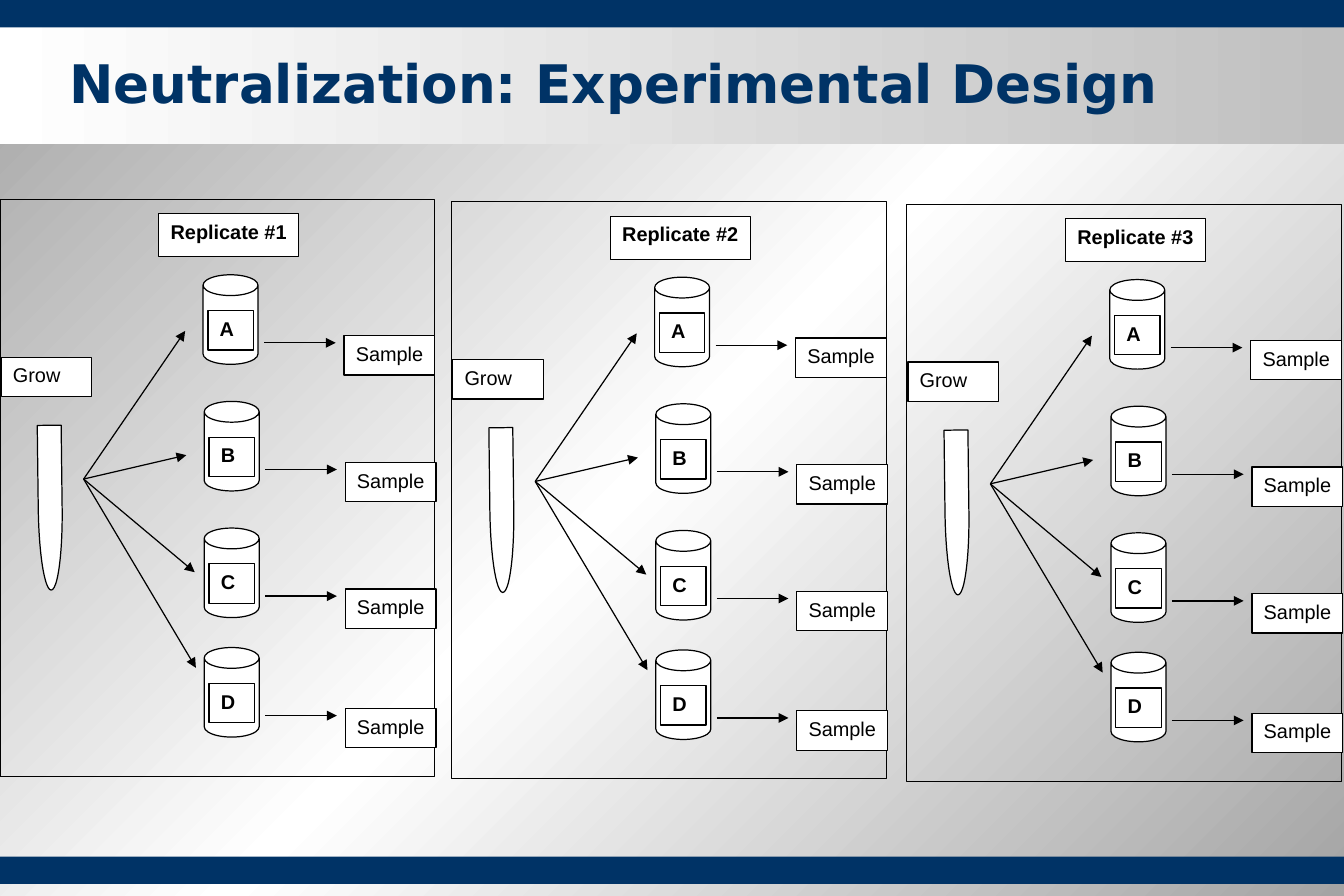
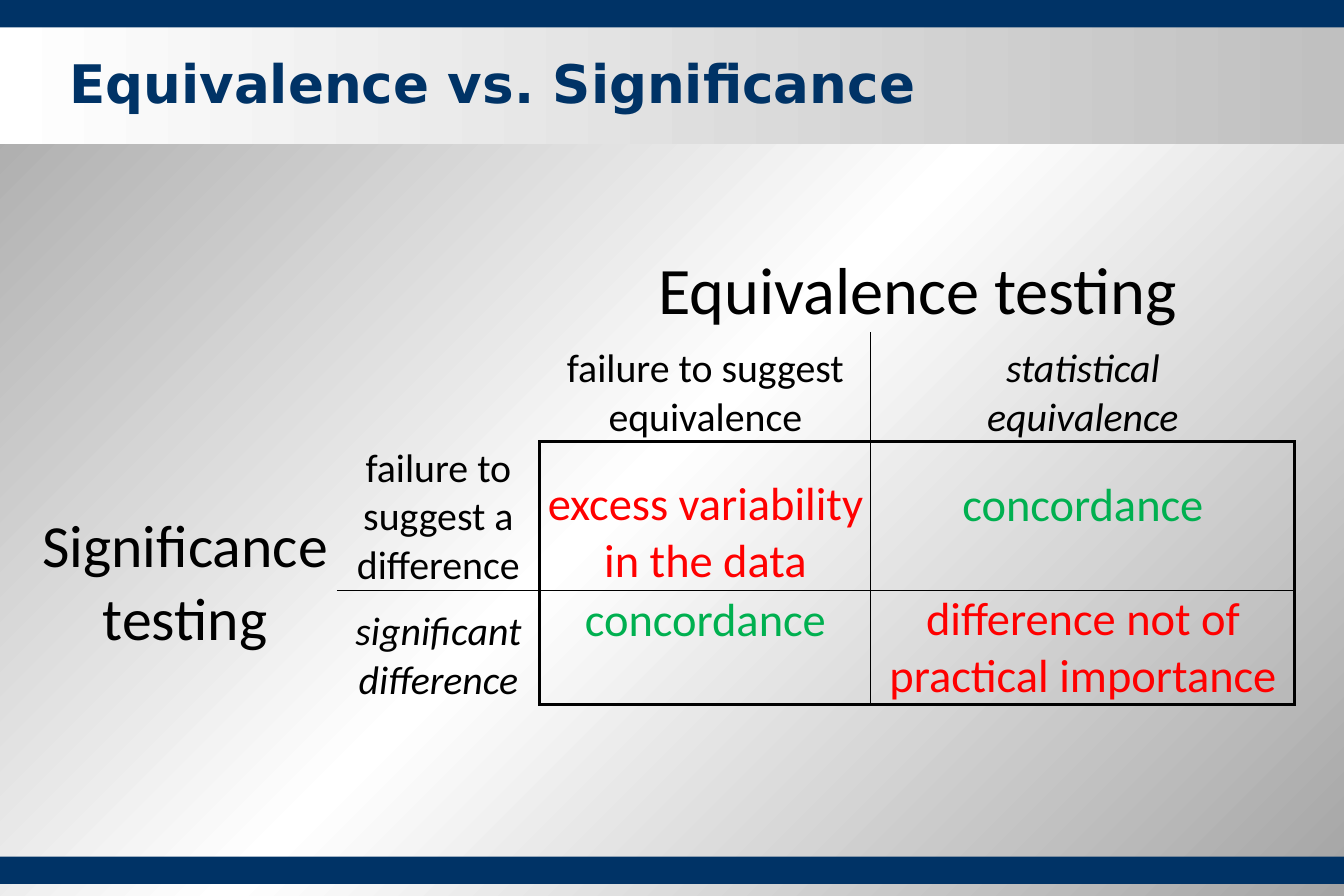
from dataclasses import dataclass
from typing import Optional

from lxml import etree
from pptx import Presentation
from pptx.dml.color import RGBColor
from pptx.enum.shapes import MSO_CONNECTOR, MSO_SHAPE
from pptx.enum.text import MSO_ANCHOR, MSO_AUTO_SIZE, PP_ALIGN
from pptx.oxml.ns import qn
from pptx.util import Inches, Pt


# Theme
@dataclass(frozen=True)
class Theme:
    navy: str = "003366"
    black: str = "000000"
    white: str = "FFFFFF"
    red: str = "FF0000"
    green: str = "00B050"
    backdrop: tuple = ((0, "A4A4A4"), (50, "FFFFFF"), (100, "A4A4A4"))
    title_fade: tuple = ((0, "FFFFFF"), (100, "C0C0C0"))
    title_font: str = "DejaVu Sans"
    label_font: str = "Arial"
    table_font: str = "Calibri"
    title_size: float = 32
    label_size: float = 12
    column_axis_size: float = 40
    row_axis_size: float = 36
    outcome_size: float = 24
    verdict_size: float = 28
    hairline: float = 0.75
    thin_rule: float = 0.5
    thick_rule: float = 2


THEME = Theme()
SLIDE_W, SLIDE_H = 11.25, 7.5
NO_GRID_STYLE = "{2D5ABB26-0587-4C30-8999-92F81FD0307C}"


# Content records
@dataclass(frozen=True)
class Panel:
    title: str
    left: float
    top: float


@dataclass(frozen=True)
class Vessel:
    letter: str
    top: float
    nudge: float
    arrow_tip: tuple[float, float]


@dataclass(frozen=True)
class Entry:
    row: int
    col: int
    lines: tuple[str, ...]
    size: float
    color: str = THEME.black
    italic: bool = False
    bottom: float = 0
    merge_to: Optional[tuple[int, int]] = None


@dataclass(frozen=True)
class Rule:
    side: str
    rows: tuple[int, ...]
    cols: tuple[int, ...]
    width: float


PANELS = (
    Panel("Replicate #1", 0, 1.67),
    Panel("Replicate #2", 3.78, 1.69),
    Panel("Replicate #3", 7.59, 1.71),
)
# Positions below are measured from the corner of a panel
VESSELS = (
    Vessel("A", 0.63, 0, (1.55, 1.10)),
    Vessel("B", 1.69, 0.01, (1.56, 2.14)),
    Vessel("C", 2.75, 0.01, (1.63, 3.12)),
    Vessel("D", 3.75, 0.01, (1.64, 3.92)),
)
FAN_START = (0.7, 2.34)

COLUMN_WIDTHS = (2.54, 1.7, 2.77, 3.55)
ROW_HEIGHTS = (0.92, 0.92, 1.24, 0.92)
ONE_LINE_UP = 0.47
ENTRIES = (
    Entry(0, 2, ("Equivalence testing",), THEME.column_axis_size, merge_to=(0, 3)),
    Entry(1, 2, ("failure to suggest equivalence",), THEME.outcome_size),
    Entry(1, 3, ("statistical", "equivalence"), THEME.outcome_size, italic=True),
    Entry(2, 0, ("Significance testing",), THEME.row_axis_size, bottom=0.4, merge_to=(3, 0)),
    Entry(2, 1, ("failure to suggest a difference",), THEME.outcome_size),
    Entry(2, 2, ("excess variability", "in the data"), THEME.verdict_size, THEME.red),
    Entry(2, 3, ("concordance",), THEME.verdict_size, THEME.green, bottom=ONE_LINE_UP),
    Entry(3, 1, ("significant difference",), THEME.outcome_size, italic=True),
    Entry(3, 2, ("concordance",), THEME.verdict_size, THEME.green, bottom=ONE_LINE_UP),
    Entry(3, 3, ("difference not of", "practical importance"), THEME.verdict_size, THEME.red),
)
RULES = (
    Rule("R", (1, 2, 3), (2,), THEME.thin_rule),
    Rule("B", (2,), (1, 2, 3), THEME.thin_rule),
    Rule("R", (2, 3), (1, 3), THEME.thick_rule),
    Rule("B", (1, 3), (2, 3), THEME.thick_rule),
)


# Drawing helpers
def rgb(color: str) -> RGBColor:
    return RGBColor.from_string(color)


def set_gradient(fill, owner, stops: tuple, angle: float) -> None:
    fill.gradient()
    fill.gradient_angle = angle
    stop_list = next(owner.iter(qn("a:gsLst")))
    for old_stop in list(stop_list):
        stop_list.remove(old_stop)
    for position, color in stops:
        stop = etree.SubElement(stop_list, qn("a:gs"), pos=str(position * 1000))
        etree.SubElement(stop, qn("a:srgbClr"), val=color)


def add_box(shapes, kind, left: float, top: float, width: float, height: float,
            fill: Optional[str] = None, outlined: bool = True):
    box = shapes.add_shape(kind, Inches(left), Inches(top), Inches(width), Inches(height))
    box.shadow.inherit = False
    if fill:
        box.fill.solid()
        box.fill.fore_color.rgb = rgb(fill)
    else:
        box.fill.background()
    if outlined:
        box.line.color.rgb = rgb(THEME.black)
        box.line.width = Pt(THEME.hairline)
    else:
        box.line.fill.background()
    return box


def style_font(font, name: str, size: float, color: str,
               bold: bool = False, italic: bool = False) -> None:
    font.name, font.size = name, Pt(size)
    font.bold, font.italic = bold, italic
    font.color.rgb = rgb(color)


def add_label(shapes, text: str, left: float, top: float, width: float,
              height: float = 0.33, bold: bool = False, centered: bool = False) -> None:
    label = add_box(shapes, MSO_SHAPE.RECTANGLE, left, top, width, height, THEME.white)
    frame = label.text_frame
    frame.word_wrap = True
    frame.vertical_anchor = MSO_ANCHOR.TOP
    frame.margin_left = Inches(0.05 if centered else 0.1)
    frame.margin_right = Inches(0.05 if centered else 0)
    paragraph = frame.paragraphs[0]
    paragraph.text = text
    paragraph.alignment = PP_ALIGN.CENTER if centered else PP_ALIGN.LEFT
    style_font(paragraph.font, THEME.label_font, THEME.label_size, THEME.black, bold)


def add_arrow(shapes, x1: float, y1: float, x2: float, y2: float) -> None:
    arrow = shapes.add_connector(
        MSO_CONNECTOR.STRAIGHT, Inches(x1), Inches(y1), Inches(x2), Inches(y2))
    arrow.line.color.rgb = rgb(THEME.black)
    arrow.line.width = Pt(THEME.hairline)
    properties = arrow._element.spPr
    etree.SubElement(properties.find(qn("a:ln")), qn("a:tailEnd"), type="triangle")
    etree.SubElement(properties, qn("a:effectLst"))


# Shared slide frame
def add_titled_slide(prs, title_text: str):
    slide = prs.slides.add_slide(prs.slide_layouts[5])
    shapes = slide.shapes
    title_band = add_box(shapes, MSO_SHAPE.RECTANGLE, 0, 0.21, SLIDE_W, 1, outlined=False)
    set_gradient(title_band.fill, title_band._element, THEME.title_fade, 0)
    for band_top in (0, 7.17):
        add_box(shapes, MSO_SHAPE.RECTANGLE, 0, band_top, SLIDE_W, 0.23, THEME.navy, False)

    title = shapes.title
    title.left, title.top = Inches(0.48), Inches(0.37)
    title.width, title.height = Inches(10.35), Inches(0.63)
    frame = title.text_frame
    frame.word_wrap = True
    frame.auto_size = MSO_AUTO_SIZE.NONE
    frame.vertical_anchor = MSO_ANCHOR.TOP
    paragraph = frame.paragraphs[0]
    paragraph.text = title_text
    paragraph.alignment = PP_ALIGN.LEFT
    style_font(paragraph.font, THEME.title_font, THEME.title_size, THEME.navy, bold=True)
    # Bring the title in front of its band
    shapes._spTree.append(title._element)
    return slide


# Experimental design
def add_vessel(shapes, panel: Panel, vessel: Vessel) -> None:
    left, top = panel.left + vessel.nudge, panel.top + vessel.top
    can = add_box(shapes, MSO_SHAPE.CAN, left + 1.7, top, 0.46, 0.75, THEME.white)
    can.adjustments[0] = 0.379
    add_label(shapes, vessel.letter, left + 1.74, top + 0.3, 0.38, bold=True)
    add_arrow(shapes, left + 2.21, top + 0.57, left + 2.81, top + 0.57)
    add_label(shapes, "Sample", left + 2.88, top + 0.51, 0.76)
    tip_x, tip_y = vessel.arrow_tip
    add_arrow(shapes, panel.left + FAN_START[0], panel.top + FAN_START[1],
              panel.left + tip_x, panel.top + tip_y)


def add_panel(slide, panel: Panel) -> None:
    shapes = slide.shapes.add_group_shape().shapes
    left, top = panel.left, panel.top
    add_box(shapes, MSO_SHAPE.RECTANGLE, left, top, 3.64, 4.83)
    add_label(shapes, panel.title, left + 1.33, top + 0.12, 1.17, 0.36, True, True)
    add_label(shapes, "Grow", left + 0.01, top + 1.32, 0.76)
    tube = add_box(shapes, MSO_SHAPE.FLOWCHART_DELAY, left - 0.27, top + 2.48,
                   1.38, 0.2, THEME.white)
    tube.rotation = 89.3
    for vessel in VESSELS:
        add_vessel(shapes, panel, vessel)


# Comparison table
def fill_entry(table, entry: Entry) -> None:
    cell = table.cell(entry.row, entry.col)
    if entry.merge_to:
        cell.merge(table.cell(*entry.merge_to))
    cell.vertical_anchor = MSO_ANCHOR.BOTTOM
    cell.margin_left = cell.margin_right = cell.margin_top = Inches(0.01)
    cell.margin_bottom = Inches(entry.bottom)
    cell.text_frame.text = "\n".join(entry.lines)
    for paragraph in cell.text_frame.paragraphs:
        paragraph.alignment = PP_ALIGN.CENTER
        style_font(paragraph.font, THEME.table_font, entry.size, entry.color,
                   italic=entry.italic)


def collect_edges() -> dict:
    """Map each cell to its edge widths, giving both neighbours a shared edge."""
    edges: dict = {}
    for rule in RULES:
        for row in rule.rows:
            for col in rule.cols:
                edges.setdefault((row, col), {})[rule.side] = rule.width
                across = (row, col + 1) if rule.side == "R" else (row + 1, col)
                if across[0] < len(ROW_HEIGHTS) and across[1] < len(COLUMN_WIDTHS):
                    opposite = "L" if rule.side == "R" else "T"
                    edges.setdefault(across, {})[opposite] = rule.width
    return edges


def draw_edges(cell, widths: dict) -> None:
    properties = cell._tc.get_or_add_tcPr()
    for index, side in enumerate(side for side in "LRTB" if side in widths):
        edge = etree.Element(qn(f"a:ln{side}"), w=str(int(Pt(widths[side]))))
        paint = etree.SubElement(edge, qn("a:solidFill"))
        etree.SubElement(paint, qn("a:srgbClr"), val=THEME.black)
        properties.insert(index, edge)


def add_comparison(slide) -> None:
    table = slide.shapes.add_table(
        len(ROW_HEIGHTS), len(COLUMN_WIDTHS), Inches(0.28), Inches(1.86),
        Inches(sum(COLUMN_WIDTHS)), Inches(sum(ROW_HEIGHTS))).table
    table.first_row = table.horz_banding = False
    table._tbl.tblPr.find(qn("a:tableStyleId")).text = NO_GRID_STYLE
    for column, width in zip(table.columns, COLUMN_WIDTHS):
        column.width = Inches(width)
    for row, height in zip(table.rows, ROW_HEIGHTS):
        row.height = Inches(height)
    for cell in table.iter_cells():
        cell.fill.background()
    for entry in ENTRIES:
        fill_entry(table, entry)
    for position, widths in collect_edges().items():
        draw_edges(table.cell(*position), widths)


def main() -> None:
    prs = Presentation()
    prs.slide_width, prs.slide_height = Inches(SLIDE_W), Inches(SLIDE_H)
    master = prs.slide_master
    set_gradient(master.background.fill, master._element, THEME.backdrop, 315)

    design = add_titled_slide(prs, "Neutralization: Experimental Design")
    for panel in PANELS:
        add_panel(design, panel)
    add_comparison(add_titled_slide(prs, "Equivalence vs. Significance"))
    prs.save("out.pptx")


if __name__ == "__main__":
    main()
